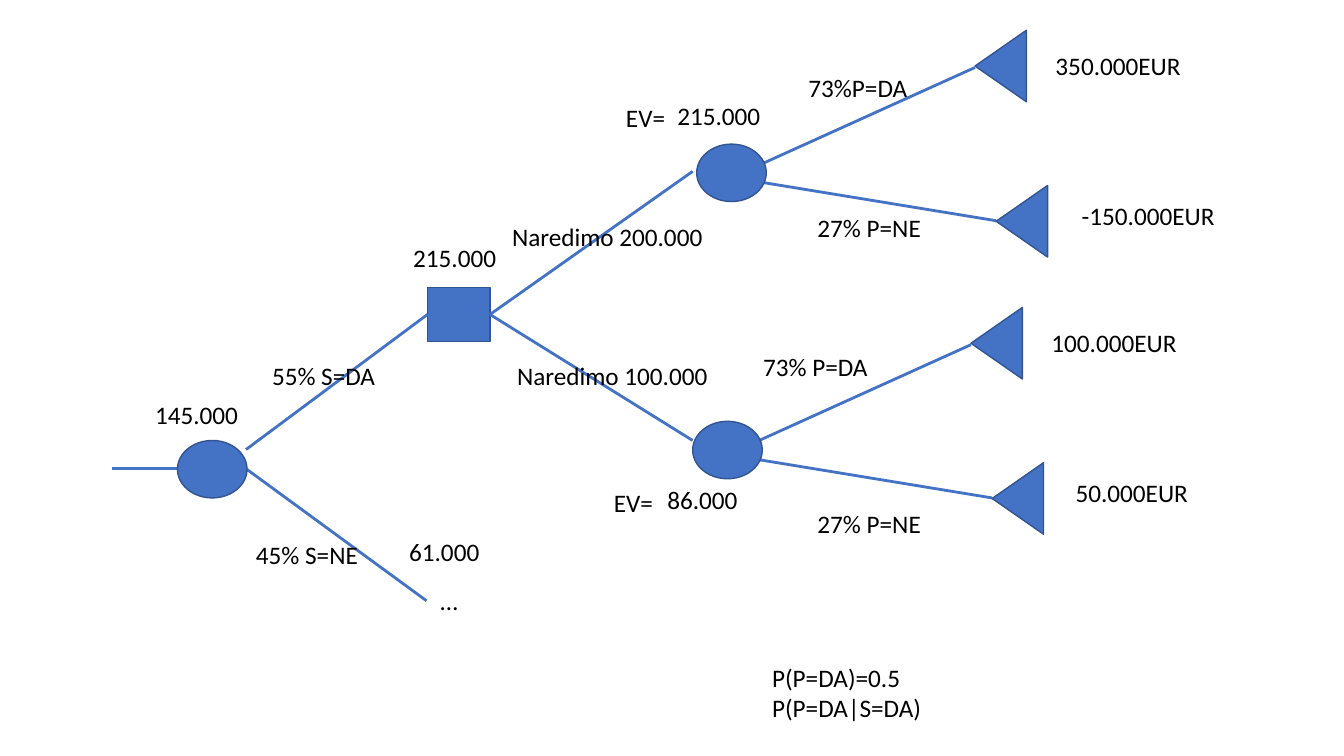
from dataclasses import dataclass

from pptx import Presentation
from pptx.dml.color import RGBColor
from pptx.enum.shapes import MSO_CONNECTOR as Connector, MSO_SHAPE as Shape
from pptx.enum.text import MSO_AUTO_SIZE as AutoSize
from pptx.oxml.ns import qn
from pptx.util import Inches, Pt


@dataclass(frozen=True)
class Theme:
    fill: RGBColor = RGBColor(0x44, 0x72, 0xC4)
    outline: RGBColor = RGBColor(0x32, 0x54, 0x91)
    text: RGBColor = RGBColor(0, 0, 0)
    font: str = "Calibri"
    size: Pt = Pt(18)
    branch_width: Pt = Pt(2)
    outline_width: Pt = Pt(1)


THEME = Theme()
CHANCE_SIZE = (0.69, 0.57)
END_SIZE = (0.71, 0.51)


def add_node(slide, kind, left, top, size, rotation=0):
    node = slide.shapes.add_shape(
        kind, Inches(left), Inches(top), *map(Inches, size))
    node.shadow.inherit = False
    node.rotation = rotation
    node.fill.solid()
    node.fill.fore_color.rgb = THEME.fill
    node.line.color.rgb = THEME.outline
    node.line.width = THEME.outline_width
    return node


def add_branch(slide, start, end):
    branch = slide.shapes.add_connector(
        Connector.STRAIGHT, *map(Inches, (*start, *end)))
    branch.line.color.rgb = THEME.fill
    branch.line.width = THEME.branch_width
    properties = branch._element.spPr
    properties.append(properties.makeelement(qn("a:effectLst"), {}))
    return branch


def add_label(slide, text, left, top, width, height=0.4):
    label = slide.shapes.add_textbox(*map(Inches, (left, top, width, height)))
    frame = label.text_frame
    frame.text = text
    frame.word_wrap = False
    frame.auto_size = AutoSize.SHAPE_TO_FIT_TEXT
    for paragraph in frame.paragraphs:
        for run in paragraph.runs:
            run.font.name = THEME.font
            run.font.size = THEME.size
            run.font.color.rgb = THEME.text


def add_outcomes(slide, left, top, labels):
    """Chance node at (left, top) with its two end nodes; labels are offsets."""
    # Branches: start and end relative to the node
    for x1, y1, x2, y2 in ((0.46, 0.28, 2.76, -0.76),
                           (0.53, 0.36, 2.97, 0.76)):
        add_branch(slide, (left + x1, top + y1), (left + x2, top + y2))
    # Chance node and end nodes
    add_node(slide, Shape.OVAL, left, top, CHANCE_SIZE)
    for dx, dy in ((2.66, -1.03), (2.87, 0.51)):
        add_node(slide, Shape.ISOSCELES_TRIANGLE, left + dx, top + dy,
                 END_SIZE, rotation=270)
    # Probabilities, payoffs and expected value
    for text, dx, dy, width in labels:
        add_label(slide, text, left + dx, top + dy, width)


def add_root(slide, left, top):
    """First chance node with its incoming line and the S=NE branch."""
    middle = top + 0.28
    add_branch(slide, (left - 0.65, middle), (left, middle))
    add_branch(slide, (left + 0.68, middle), (left + 2.47, top + 1.59))
    add_node(slide, Shape.OVAL, left, top, CHANCE_SIZE)
    for text, dx, dy, width in (("145.000", -0.32, -0.46, 1.03),
                                ("55% S=DA", 0.84, -0.84, 1.24),
                                ("45% S=NE", 0.68, 0.93, 1.22),
                                ("61.000", 2.2, 0.9, 0.9),
                                ("…", 2.51, 1.39, 0.38)):
        add_label(slide, text, left + dx, top + dy, width)


def add_decision(slide, left, top, root_exit, targets):
    """Decision square, joined to the root and to both order sizes."""
    decision = add_node(slide, Shape.RECTANGLE, left, top, (0.62, 0.54))
    incoming = add_branch(slide, root_exit, (left, top + 0.27))
    incoming.end_connect(decision, 1)
    for target in targets:
        order = add_branch(slide, (left + 0.62, top + 0.27), target)
        order.begin_connect(decision, 3)
    for text, dx, dy, width in (("215.000", -0.24, -0.49, 1.03),
                                ("Naredimo 200.000", 0.74, -0.7, 2.11),
                                ("Naredimo 100.000", 0.79, 0.68, 2.18)):
        add_label(slide, text, left + dx, top + dy, width)


def main():
    deck = Presentation()
    deck.slide_width, deck.slide_height = Inches(13.33), Inches(7.5)
    slide = deck.slides.add_slide(deck.slide_layouts[6])

    # Tree from left to right
    add_decision(slide, 4.24, 2.85, root_exit=(2.44, 4.46),
                 targets=((6.87, 1.7), (6.87, 4.37)))
    add_root(slide, 1.76, 4.37)
    add_outcomes(slide, 6.91, 1.43, (
        ("73%P=DA", 1.01, -0.76, 1.19),
        ("27% P=NE", 1.1, 0.63, 1.24),
        ("350.000EUR", 3.46, -0.98, 1.45),
        ("-150.000EUR", 3.72, 0.51, 1.53),
        ("EV=", -0.8, -0.46, 0.59),
        ("215.000", -0.29, -0.48, 1.03)))
    add_outcomes(slide, 6.87, 4.18, (
        ("73% P=DA", 0.6, -0.74, 1.25),
        ("27% P=NE", 1.14, 0.81, 1.24),
        ("100.000EUR", 3.46, -0.98, 1.45),
        ("50.000EUR", 3.7, 0.51, 1.33),
        ("EV=", -0.88, 0.61, 0.59),
        ("86.000", -0.35, 0.58, 0.9)))

    # Probability note
    add_label(slide, "P(P=DA)=0.5\nP(P=DA|S=DA)", 7.56, 6.52, 1.7, 0.71)
    deck.save("out.pptx")


if __name__ == "__main__":
    main()
